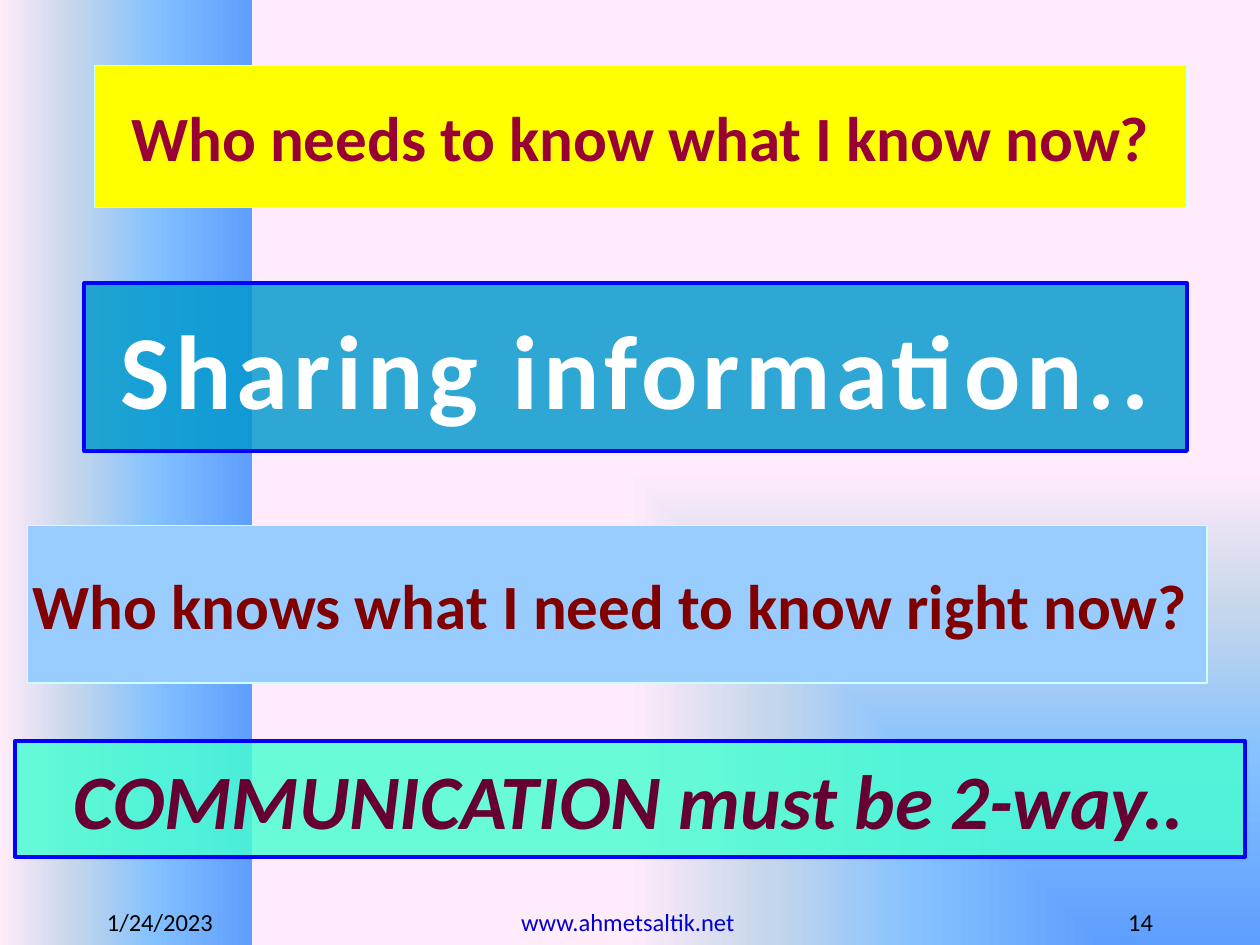
from lxml import etree
from pptx import Presentation
from pptx.dml.color import RGBColor
from pptx.enum.shapes import MSO_SHAPE
from pptx.enum.text import MSO_ANCHOR, PP_ALIGN
from pptx.oxml import parse_xml
from pptx.oxml.ns import nsdecls, qn
from pptx.util import Inches, Pt

RECTANGLE = MSO_SHAPE.RECTANGLE
MIDDLE = MSO_ANCHOR.MIDDLE
LEFT, CENTER, RIGHT = PP_ALIGN.LEFT, PP_ALIGN.CENTER, PP_ALIGN.RIGHT
FONT = "Calibri"

COLORS = {
    "blue": "5E9EFF", "sky": "85C2FF", "mist": "C4D6EB", "pink": "FFEBFA",
    "yellow": "FFFF00", "pale": "CCFFFF", "crimson": "990033",
    "light blue": "99CCFF", "maroon": "800000", "teal": "0099CC",
    "border": "0000FF", "white": "FFFFFF", "mint": "47FFD1",
    "plum": "660033", "black": "000000", "link": "0000CC",
}

BACKGROUND_STOPS = [(0, "blue"), (40, "sky"), (70, "mist"), (100, "pink")]
SIDEBAR_STOPS = [(0, "pink"), (30, "mist"), (60, "sky"), (100, "blue")]
TO_CORNER = '<a:path path="rect"><a:fillToRect l="100000" t="100000"/></a:path>'
TO_RIGHT = '<a:lin ang="0" scaled="0"/>'

QUESTION = {"size": 36, "line": "pale", "width": 0.75}
ANSWER = {"line": "border", "width": 2.25, "opacity": 82}
BANNERS = [
    {**QUESTION, "text": "Who needs to know what I know now?",
     "at": (0.75, 0.52, 8.67, 1.13), "fill": "yellow", "color": "crimson"},
    {**QUESTION, "text": "Who knows what I need to know right now? ",
     "at": (0.22, 4.17, 9.36, 1.25), "fill": "light blue", "color": "maroon"},
    {**ANSWER, "text": "Sharing information..", "size": 60, "spacing": 3,
     "at": (0.67, 2.25, 8.75, 1.33), "fill": "teal", "color": "white"},
    {**ANSWER, "text": "COMMUNICATION must be 2-way..", "size": 44, "italic": True,
     "at": (0.12, 5.88, 9.76, 0.92), "fill": "mint", "color": "plum"},
]

FOOTER_TOP, FOOTER_HEIGHT = 7.15, 0.41
FOOTERS = [
    ("1/24/2023", 0.75, 2.08, LEFT, "black"),
    ("www.ahmetsaltik.net ", 3.42, 3.17, CENTER, "link"),
    ("14", 7.17, 2.08, RIGHT, "black"),
]


def rgb(name):
    return RGBColor.from_string(COLORS[name])


def set_gradient(fill, parent, stops, direction):
    fill.solid()
    marks = "".join(
        f'<a:gs pos="{position * 1000}"><a:srgbClr val="{COLORS[name]}"/></a:gs>'
        for position, name in stops)
    gradient = parse_xml(
        f'<a:gradFill {nsdecls("a")} rotWithShape="1">'
        f"<a:gsLst>{marks}</a:gsLst>{direction}</a:gradFill>")
    parent.replace(parent.find(qn("a:solidFill")), gradient)


def add_rectangle(page, at):
    box = page.shapes.add_shape(RECTANGLE, *map(Inches, at))
    box.shadow.inherit = False
    return box


def write(box, text, size, color, align):
    para = box.text_frame.paragraphs[0]
    para.alignment = align
    para.font.name = FONT
    para.font.size = Pt(size)
    para.font.color.rgb = rgb(color)
    span = para.add_run()
    span.text = text
    return para, span


def add_banner(page, banner):
    box = add_rectangle(page, banner["at"])
    box.fill.solid()
    box.fill.fore_color.rgb = rgb(banner["fill"])
    if "opacity" in banner:
        color = box._element.spPr.find(qn("a:solidFill"))[0]
        etree.SubElement(color, qn("a:alpha")).set("val", str(banner["opacity"] * 1000))
    box.line.color.rgb = rgb(banner["line"])
    box.line.width = Pt(banner["width"])
    box.text_frame.word_wrap = False
    box.text_frame.vertical_anchor = MIDDLE
    para, span = write(box, banner["text"], banner["size"], banner["color"], CENTER)
    para.font.bold = True
    para.font.italic = banner.get("italic", False)
    if "spacing" in banner:
        span._r.get_or_add_rPr().set("spc", str(banner["spacing"] * 100))


def add_footer(page, text, left, width, align, color):
    box = page.shapes.add_textbox(
        *map(Inches, (left, FOOTER_TOP, width, FOOTER_HEIGHT)))
    box.text_frame.word_wrap = True
    write(box, text, 14, color, align)


def main():
    deck = Presentation()
    deck.slide_width, deck.slide_height = Inches(10), Inches(7.5)
    page = deck.slides.add_slide(deck.slide_layouts[6])

    backdrop = page.background.fill
    backdrop.solid()
    set_gradient(backdrop, page._element.find(".//" + qn("p:bgPr")),
                 BACKGROUND_STOPS, TO_CORNER)

    sidebar = add_rectangle(page, (0, 0, 2, 7.5))
    sidebar.line.fill.background()
    set_gradient(sidebar.fill, sidebar._element.spPr, SIDEBAR_STOPS, TO_RIGHT)

    for banner in BANNERS:
        add_banner(page, banner)
    for footer in FOOTERS:
        add_footer(page, *footer)

    deck.save("out.pptx")


if __name__ == "__main__":
    main()
